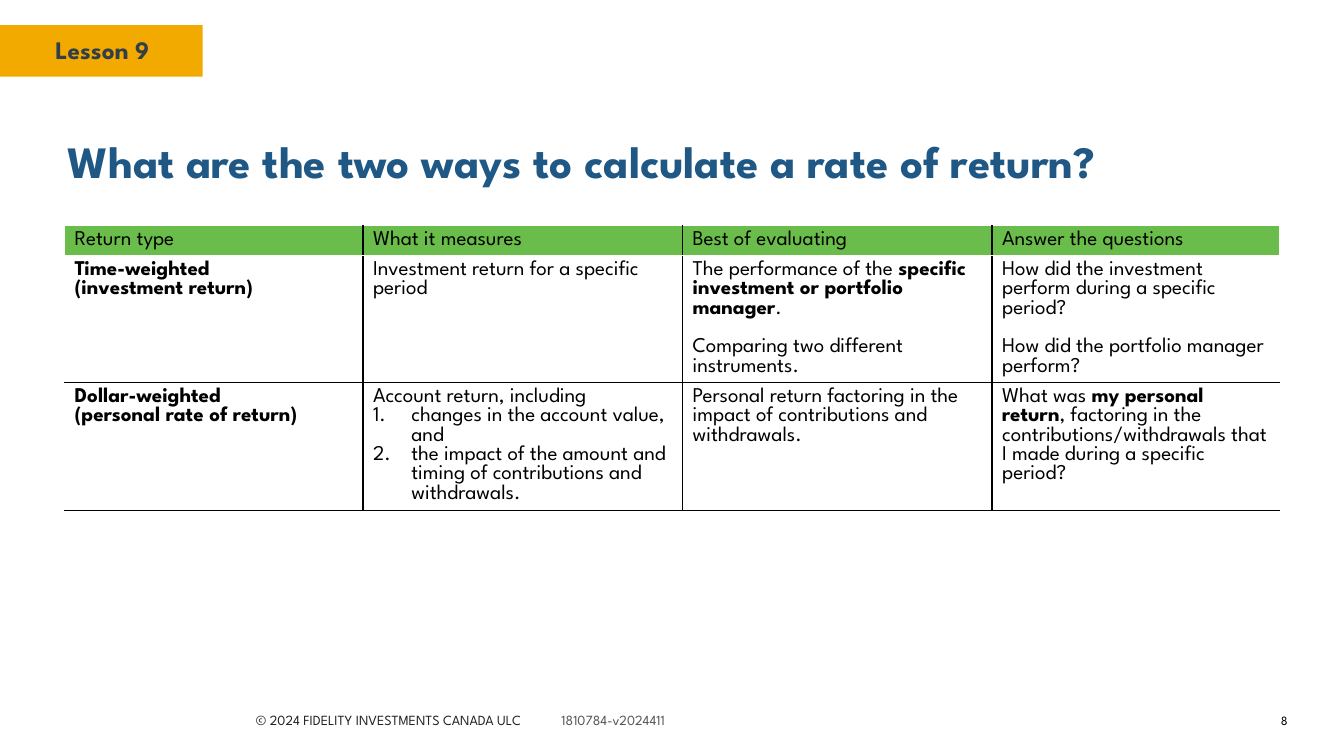
from lxml.etree import SubElement
from pptx import Presentation
from pptx.dml.color import RGBColor
from pptx.enum.shapes import MSO_SHAPE
from pptx.enum.text import MSO_ANCHOR, PP_ALIGN
from pptx.oxml.ns import qn
from pptx.util import Inches, Pt

FONT = "League Spartan"
COLORS = {"gold": "F2A900", "slate": "333F48", "blue": "205885", "green": "6ABD4A",
          "black": "000000", "white": "FFFFFF", "ink": "222222", "gray": "545454"}
COLUMNS = [2.96, 3.17, 3.07, 2.85]
ROWS = [0.29, 1.26, 1.27]
LINE_HEIGHT = Pt(13.9)
CELLS = [
    [["Return type"], ["What it measures"], ["Best of evaluating"], ["Answer the questions"]],
    [["**Time-weighted \v(investment return)**"],
     ["Investment return for a specific period"],
     ["The performance of the **specific investment or portfolio manager**.",
      "Comparing two different instruments."],
     ["How did the investment perform during a specific period?",
      "How did the portfolio manager perform?"]],
    [["**Dollar-weighted \v(personal rate of return)**"],
     ["Account return, including",
      "#changes in the account value, and",
      "#the impact of the amount and timing of contributions and withdrawals."],
     ["Personal return factoring in the impact of contributions and withdrawals."],
     ["What was **my personal return**, factoring in the contributions/withdrawals "
      "that I made during a specific period?"]],
]


def rgb(name):
    return RGBColor.from_string(COLORS[name])


def style(span, size, color, bold=False):
    span.font.name = FONT
    span.font.size = Pt(size)
    span.font.bold = bold
    span.font.color.rgb = rgb(color)


def add_text(page, box, text, size, color, bold=False, align=PP_ALIGN.LEFT):
    frame = page.shapes.add_textbox(*map(Inches, box)).text_frame
    frame.word_wrap = True
    frame.vertical_anchor = MSO_ANCHOR.MIDDLE
    frame.text = text
    para = frame.paragraphs[0]
    para.alignment = align
    for span in para.runs:
        style(span, size, color, bold)
    return para


def add_lesson_tag(page, box):
    left, top, width, height = box
    tag = page.shapes.add_shape(MSO_SHAPE.RECTANGLE, *map(Inches, box))
    tag.shadow.inherit = False
    tag.fill.solid()
    tag.fill.fore_color.rgb = rgb("gold")
    tag.line.fill.background()
    label = (left + 0.45, top + 0.04, width - 0.7, height - 0.11)
    add_text(page, label, "Lesson 9", 18, "slate", bold=True)


def add_footer(page, box):
    left, top, width, height = box
    para = add_text(page, (left, top, width * 0.64, height),
                    "© 2024 FIDELITY INVESTMENTS CANADA ULC", 10, "ink")
    tabs = SubElement(para._p.get_or_add_pPr(), qn("a:tabLst"))
    SubElement(tabs, qn("a:tab"), pos=str(Inches(3.03)), algn="l")
    span = para.add_run()
    span.text = "\t1810784-v2024411"
    style(span, 10, "gray")
    add_text(page, (left + width - 0.7, top, 0.7, height), "8", 9, "black", align=PP_ALIGN.RIGHT)


def set_borders(cell, sides):
    properties = cell._tc.get_or_add_tcPr()
    for side, color in sides.items():
        line = SubElement(properties, qn(f"a:ln{side}"), w=str(Pt(1)))
        SubElement(SubElement(line, qn("a:solidFill")), qn("a:srgbClr"), val=COLORS[color])


def fill_cell(cell, lines):
    frame = cell.text_frame
    for index, line in enumerate(lines):
        para = frame.add_paragraph() if index else frame.paragraphs[0]
        if line.startswith("#"):
            numbering = para._p.get_or_add_pPr()
            numbering.set("marL", str(Inches(0.38)))
            numbering.set("indent", str(-Inches(0.38)))
            SubElement(numbering, qn("a:buFont"), typeface=FONT)
            SubElement(numbering, qn("a:buAutoNum"), type="arabicPeriod")
        elif index:
            para.space_before = LINE_HEIGHT
        para.line_spacing = LINE_HEIGHT
        for part, text in enumerate(line.lstrip("#").split("**")):
            for piece, words in enumerate(text.split("\v")):
                if piece:
                    para.add_line_break()
                if words:
                    span = para.add_run()
                    span.text = words
                    style(span, 15, "black", bold=part % 2 == 1)


def add_returns_table(page, left, top):
    box = map(Inches, (left, top, sum(COLUMNS), sum(ROWS)))
    table = page.shapes.add_table(len(ROWS), len(COLUMNS), *box).table
    table.first_row = table.horz_banding = False
    for column, width in zip(table.columns, COLUMNS):
        column.width = Inches(width)
    for r, height in enumerate(ROWS):
        table.rows[r].height = Inches(height)
        for c, lines in enumerate(CELLS[r]):
            cell = table.cell(r, c)
            set_borders(cell, {
                "L": "black" if c else "white",
                "R": "black" if c < len(COLUMNS) - 1 else "white",
                "T": "black" if r > 1 else "white",
                "B": "black" if r else "white"})
            cell.fill.solid()
            cell.fill.fore_color.rgb = rgb("white" if r else "green")
            fill_cell(cell, lines)


def main():
    deck = Presentation()
    deck.slide_width, deck.slide_height = Inches(13.33), Inches(7.5)
    page = deck.slides.add_slide(deck.slide_layouts[6])
    add_lesson_tag(page, (0, 0.25, 2.01, 0.51))
    add_text(page, (0.57, 1.23, 12.2, 0.73),
             "What are the two ways to calculate a rate of return?", 32, "blue", bold=True)
    add_returns_table(page, 0.64, 2.24)
    add_footer(page, (2.44, 7.01, 10.43, 0.27))
    deck.save("out.pptx")


if __name__ == "__main__":
    main()
